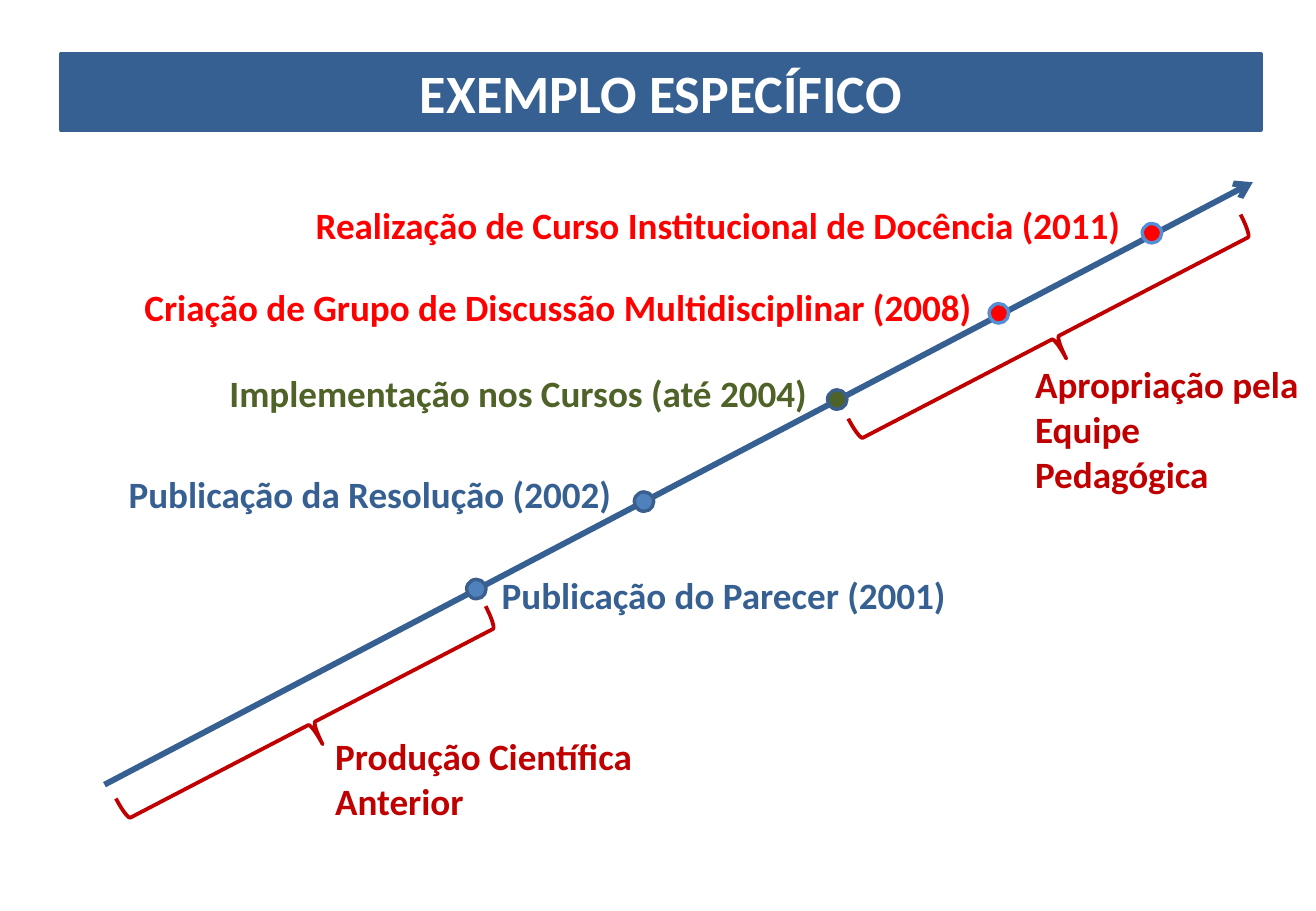
from dataclasses import dataclass

from pptx import Presentation
from pptx.dml.color import RGBColor
from pptx.enum.shapes import MSO_CONNECTOR as Connector, MSO_SHAPE as Shape
from pptx.enum.text import MSO_ANCHOR as Anchor, MSO_AUTO_SIZE as AutoSize, PP_ALIGN as Align
from pptx.oxml.ns import qn
from pptx.util import Pt
from lxml.etree import SubElement

PX = 9144


@dataclass(frozen=True)
class Theme:
    font: str = "Calibri"
    title_size: int = 32
    label_size: int = 22
    white: str = "FFFFFF"
    navy: str = "376092"
    blue: str = "4F81BD"
    dot_edge: str = "3A5F8C"
    light_edge: str = "558ED5"
    green: str = "4F6228"
    red: str = "FF0000"
    crimson: str = "C00000"


class TimelineSlide:
    def __init__(self, deck, theme):
        self.theme = theme
        self.page = deck.slides.add_slide(deck.slide_layouts[6])

    def stroke(self, line, color, width):
        line.color.rgb = RGBColor.from_string(color)
        line.width = Pt(width)

    def shape(self, kind, left, top, width, height, edge, weight, fill=None):
        shape = self.page.shapes.add_shape(kind, left * PX, top * PX, width * PX, height * PX)
        shape.shadow.inherit = False
        if fill:
            shape.fill.solid()
            shape.fill.fore_color.rgb = RGBColor.from_string(fill)
        else:
            shape.fill.background()
        self.stroke(shape.line, edge, weight)
        return shape

    def set_text(self, frame, text, color, size, align):
        frame.word_wrap = True
        para = frame.paragraphs[0]
        para.text = text
        para.alignment = align
        para.font.name = self.theme.font
        para.font.size = Pt(size)
        para.font.bold = True
        para.font.color.rgb = RGBColor.from_string(color)

    def banner(self, text, left, top, width, height):
        theme = self.theme
        bar = self.shape(Shape.RECTANGLE, left, top, width, height, theme.navy, 2, theme.navy)
        bar.text_frame.vertical_anchor = Anchor.MIDDLE
        self.set_text(bar.text_frame, text, theme.white, theme.title_size, Align.CENTER)

    def label(self, text, color, left, top, width, height=47):
        box = self.page.shapes.add_textbox(left * PX, top * PX, width * PX, height * PX)
        self.set_text(box.text_frame, text, color, self.theme.label_size, Align.LEFT)
        box.text_frame.auto_size = AutoSize.SHAPE_TO_FIT_TEXT

    def arrow(self, start_x, start_y, end_x, end_y):
        arrow = self.page.shapes.add_connector(
            Connector.STRAIGHT, start_x * PX, start_y * PX, end_x * PX, end_y * PX)
        self.stroke(arrow.line, self.theme.navy, 3.5)
        properties = arrow._element.spPr
        SubElement(properties.find(qn("a:ln")), qn("a:tailEnd"), type="arrow")
        SubElement(properties, qn("a:effectLst"))

    def dot(self, left, top, fill, edge):
        self.shape(Shape.FLOWCHART_CONNECTOR, left, top, 16, 16, edge, 2, fill)

    def brace(self, left, top, height):
        brace = self.shape(Shape.RIGHT_BRACE, left, top, 39, height, self.theme.crimson, 2.25)
        brace.rotation = 62.5


def main():
    theme = Theme()
    deck = Presentation()
    deck.slide_width, deck.slide_height = 1083 * PX, 750 * PX
    slide = TimelineSlide(deck, theme)

    slide.banner("EXEMPLO ESPECÍFICO", 50, 44, 988, 63)
    slide.arrow(86, 646, 1031, 150)

    publication = theme.blue, theme.dot_edge, theme.navy
    courses = theme.green, theme.dot_edge, theme.green
    team = theme.red, theme.light_edge, theme.red
    milestones = [
        ("Publicação do Parecer (2001)", publication, (384, 477), (403, 466, 422)),
        ("Publicação da Resolução (2002)", publication, (522, 405), (96, 383, 429)),
        ("Implementação nos Cursos (até 2004)", courses, (681, 321), (179, 300, 514)),
        ("Criação de Grupo de Discussão Multidisciplinar (2008)", team, (814, 250), (109, 229, 718)),
        ("Realização de Curso Institucional de Docência (2011)", team, (940, 184), (250, 162, 702)),
    ]
    for text, (fill, edge, ink), dot_at, label_at in milestones:
        slide.dot(*dot_at, fill, edge)
        slide.label(text, ink, *label_at)

    phases = [
        ("Produção Científica Anterior", (237, 424, 343), (266, 599, 278, 84)),
        ("Apropriação pela Equipe Pedagógica", (849, 96, 364), (842, 293, 251, 121)),
    ]
    for text, brace_at, label_at in phases:
        slide.brace(*brace_at)
        slide.label(text, theme.crimson, *label_at)

    deck.save("out.pptx")


if __name__ == "__main__":
    main()
